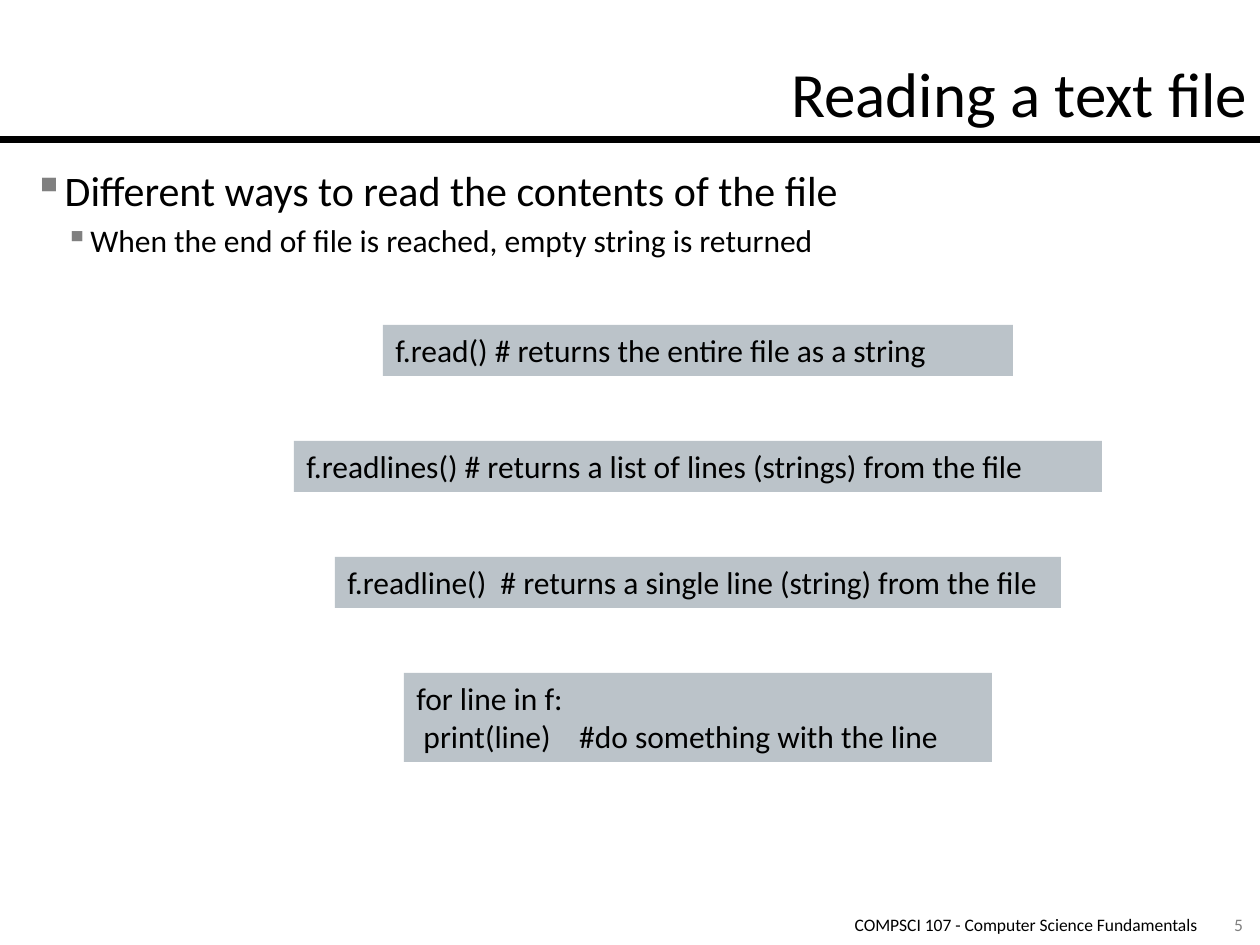
from lxml import etree
from pptx import Presentation
from pptx import util as u
from pptx.dml.color import RGBColor
from pptx.enum import shapes, text
from pptx.oxml.ns import qn

FONT = "Calibri"
BLACK, GREY, PANEL = "000000", "808080", "BBC3C9"
LEFT, MID, RIGHT = text.PP_ALIGN.LEFT, text.PP_ALIGN.CENTER, text.PP_ALIGN.RIGHT
TOP, CENTRE, BASE = (text.MSO_ANCHOR.TOP, text.MSO_ANCHOR.MIDDLE,
                     text.MSO_ANCHOR.BOTTOM)

# Width and text of each code box, from top to bottom
CODE = [
    (630, "f.read() # returns the entire file as a string"),
    (808, "f.readlines() # returns a list of lines (strings) from the file"),
    (726, "f.readline()  # returns a single line (string) from the file"),
    (588, "for line in f:\n print(line)    #do something with the line"),
]
# Size, bullet indent and text of each point
POINTS = [
    (24, 25, "Different ways to read the contents of the file"),
    (18, 57, "When the end of file is reached, empty string is returned"),
]


def px(n):
    return u.Inches(n / 126)


def color(value):
    return RGBColor.from_string(value)


def style(par, size, ink=BLACK, align=LEFT):
    par.alignment = align
    for run in par.runs:
        run.font.name = FONT
        run.font.size = u.Pt(size)
        run.font.color.rgb = color(ink)


def write(shape, words, size, ink=BLACK, align=LEFT, anchor=TOP):
    frame = shape.text_frame
    frame.word_wrap = True
    frame.vertical_anchor = anchor
    frame.text = words
    for par in frame.paragraphs:
        style(par, size, ink, align)
    return frame


def label(slide, box, *args):
    return write(slide.shapes.add_textbox(*map(px, box)), *args)


def panel(slide, box, fill):
    shape = slide.shapes.add_shape(shapes.MSO_SHAPE.RECTANGLE, *map(px, box))
    shape.shadow.inherit = False
    shape.fill.solid()
    shape.fill.fore_color.rgb = color(fill)
    shape.line.fill.background()
    return shape


def bullet(par, indent):
    props = par._p.get_or_add_pPr()
    props.set("marL", str(px(indent)))
    props.set("indent", str(-px(25)))
    tint = etree.SubElement(props, qn("a:buClr"))
    etree.SubElement(tint, qn("a:srgbClr")).set("val", GREY)
    etree.SubElement(props, qn("a:buChar")).set("char", "▪")


def points(slide, box):
    frame = label(slide, box, "\n".join(words for *_, words in POINTS), 24)
    for i, (par, (size, indent, _)) in enumerate(zip(frame.paragraphs, POINTS)):
        bullet(par, indent)
        style(par, size)
        if i:
            par.space_before = u.Pt(size * 0.2)


def code(slide, mid=698, top=325, step=116):
    """Stack the code boxes at equal steps about one centre line."""
    for i, (width, words) in enumerate(CODE):
        high = 51 + 38 * words.count("\n")
        box = (mid - width / 2, top + i * step, width, high)
        write(panel(slide, box, PANEL), words, 18)


def main():
    deck = Presentation()
    deck.slide_width, deck.slide_height = px(1260), px(945)
    slide = deck.slides.add_slide(deck.slide_layouts[6])
    panel(slide, (0, 136, 1260, 7), BLACK)
    label(slide, (0, 0, 1260, 136), "Reading a text file", 36, BLACK, RIGHT, BASE)
    points(slide, (21, 158, 1218, 746))
    code(slide)
    label(slide, (1207, 914, 63, 21), "5", 10, GREY, MID, CENTRE)
    foot = label(slide, (609, 914, 588, 21),
                 "COMPSCI 107 - Computer Science Fundamentals",
                 10, BLACK, RIGHT, CENTRE)
    foot.margin_left = foot.margin_right = 0
    foot.margin_top = foot.margin_bottom = 0
    deck.save("out.pptx")


if __name__ == "__main__":
    main()
